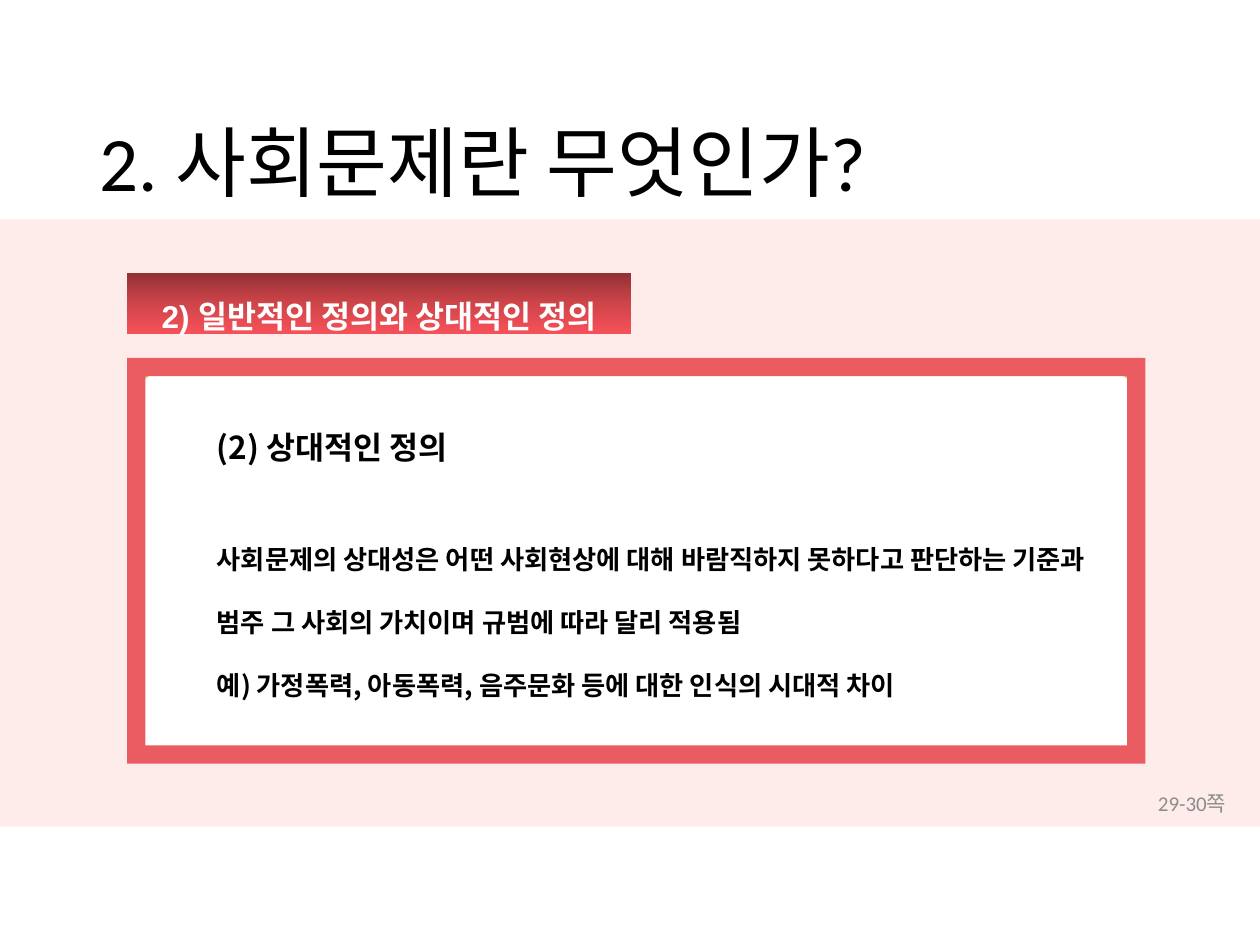
from copy import deepcopy

from pptx import Presentation
from pptx.dml.color import RGBColor
from pptx.enum.shapes import MSO_SHAPE as Kind
from pptx.enum.text import MSO_ANCHOR as Anchor, PP_ALIGN as Align
from pptx.util import Inches, Pt

COLORS = {
    "ink": "000000", "paper": "FFFFFF", "blush": "FEECEB", "gray": "8C8C8C",
    "rose": "EB5C62", "gold": "CDBF3C",
    "dark": "923034", "mid": "CF454A", "light": "F65158",
}
COLS, ROWS = 100, 75


def tint(name):
    return RGBColor.from_string(COLORS[name])


class Page:
    """Places elements on a grid of COLS by ROWS cells."""

    def __init__(self, deck):
        self.slide = deck.slides.add_slide(deck.slide_layouts[6])
        self.col = deck.slide_width / COLS
        self.row = deck.slide_height / ROWS

    def area(self, x, y, w, h):
        return (round(x * self.col), round(y * self.row),
                round(w * self.col), round(h * self.row))

    def shape(self, kind, box, fill, line=None, adjust=None):
        item = self.slide.shapes.add_shape(kind, *self.area(*box))
        item.shadow.inherit = False
        if isinstance(fill, str):
            item.fill.solid()
            item.fill.fore_color.rgb = tint(fill)
        else:
            self.blend(item.fill, fill)
        if line:
            item.line.color.rgb = tint(line)
            item.line.width = Pt(3)
        else:
            item.line.fill.background()
        if adjust is not None:
            item.adjustments[0] = adjust
        return item

    def blend(self, fill, names):
        """Fill from top to bottom with evenly spaced colours."""
        fill.gradient()
        fill.gradient_angle = 270
        first = fill.gradient_stops[0]._gs
        while len(fill.gradient_stops) < len(names):
            first.addnext(deepcopy(first))
        for i, (stop, name) in enumerate(zip(fill.gradient_stops, names)):
            stop.position = i / (len(names) - 1)
            stop.color.rgb = tint(name)

    def label(self, box, anchor, text, **style):
        item = self.slide.shapes.add_textbox(*self.area(*box))
        self.set_text(item, anchor, [(text, style)])

    def set_text(self, item, anchor, lines):
        frame = item.text_frame
        frame.word_wrap = True
        frame.vertical_anchor = anchor
        for i, (text, style) in enumerate(lines):
            para = frame.add_paragraph() if i else frame.paragraphs[0]
            self.set_para(para, text, **style)

    def set_para(self, para, text, size, font, color="ink", bold=False,
                 align=Align.LEFT, spacing=1.0, before=0, after=0, indent=0):
        para.text = text
        para.alignment = align
        para.line_spacing = spacing
        para.space_before, para.space_after = Pt(before), Pt(after)
        if indent:
            props = para._p.get_or_add_pPr()
            props.set("marL", str(Inches(indent)))
            props.set("indent", "0")
        para.font.size, para.font.name = Pt(size), font
        para.font.bold = bold
        para.font.color.rgb = tint(color)


def main():
    deck = Presentation()
    deck.slide_width, deck.slide_height = Inches(10), Inches(7.5)
    page = Page(deck)

    page.shape(Kind.RECTANGLE, (0, 17.4, COLS, 48.2), "blush")
    page.label((6.9, 4, 86.2, 18.5), Anchor.MIDDLE, "2. 사회문제란 무엇인가?",
               size=44, font="Calibri", spacing=0.9)
    page.label((89.1, 62, 9.2, 3.5), Anchor.MIDDLE, "29-30쪽",
               size=12, font="Calibri", color="gray", align=Align.RIGHT)

    tab = page.shape(Kind.RECTANGLE, (10.1, 21.7, 40, 4.8),
                     ("dark", "mid", "light"))
    frame = tab.text_frame
    frame.margin_left = frame.margin_right = Inches(0.07)
    frame.margin_top = frame.margin_bottom = Inches(0.04)
    page.set_text(tab, Anchor.TOP, [
        ("2) 일반적인 정의와 상대적인 정의",
         dict(size=18, font="Arial", color="paper", bold=True,
              align=Align.CENTER, spacing=1.5, before=3.6)),
    ])

    card = page.shape(Kind.ROUNDED_RECTANGLE, (10.6, 29.4, 79.8, 30.8),
                      "paper", line="gold", adjust=0.07)
    base = dict(font="Noto Sans CJK KR", bold=True, indent=0.5)
    body = dict(base, size=15, spacing=2.0)
    page.set_text(card, Anchor.MIDDLE, [
        ("(2) 상대적인 정의", dict(base, size=18, after=26)),
        ("사회문제의 상대성은 어떤 사회현상에 대해 바람직하지 못하다고 판단하는 "
         "기준과 범주 그 사회의 가치이며 규범에 따라 달리 적용됨", body),
        ("예) 가정폭력, 아동폭력, 음주문화 등에 대한 인식의 시대적 차이", body),
    ])
    page.shape(Kind.FRAME, (10.1, 28.4, 80.8, 32.2), "rose", adjust=0.045)

    deck.save("out.pptx")


if __name__ == "__main__":
    main()
